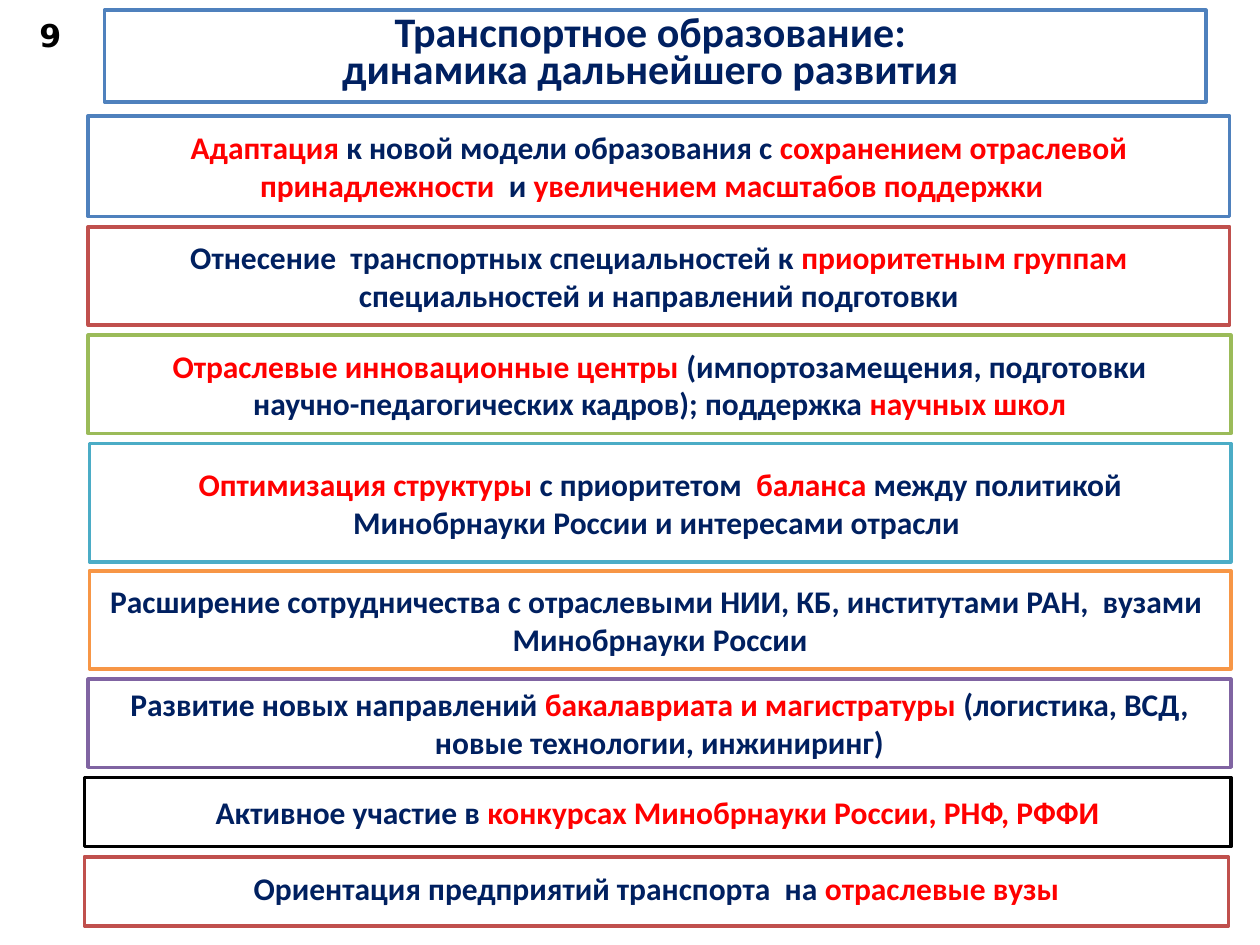
from dataclasses import dataclass

from pptx import Presentation
from pptx.dml.color import RGBColor
from pptx.enum.shapes import MSO_SHAPE
from pptx.enum.text import MSO_ANCHOR, MSO_AUTO_SIZE, PP_ALIGN
from pptx.util import Inches, Pt

RECT = MSO_SHAPE.RECTANGLE
MIDDLE = MSO_ANCHOR.MIDDLE
NO_FIT = MSO_AUTO_SIZE.NONE
CENTER = PP_ALIGN.CENTER


@dataclass(frozen=True)
class Theme:
    font: str = "Calibri"
    num_font: str = "DejaVu Sans"
    head: float = 24
    body: float = 18
    lead: float = 20.8
    line: float = 2
    navy: str = "002060"
    red: str = "FF0000"
    black: str = "000000"
    white: str = "FFFFFF"
    blue: str = "4F81BD"
    brick: str = "C0504D"
    green: str = "9BBB59"
    teal: str = "4BACC6"
    orange: str = "F79646"
    purple: str = "8064A2"


THEME = Theme()


@dataclass(frozen=True)
class Goal:
    left: float
    top: float
    width: float
    height: float
    edge: str
    text: str
    lead: float = 0


# Asterisks enclose the words set in red.
GOALS = [
    Goal(0.7, 0.92, 9.06, 0.8, THEME.blue,
         "*Адаптация* к новой модели образования с *сохранением отраслевой "
         "принадлежности * и *увеличением масштабов поддержки  *"),
    Goal(0.7, 1.8, 9.06, 0.78, THEME.brick,
         "Отнесение  транспортных специальностей к *приоритетным группам *"
         "специальностей и направлений подготовки"),
    Goal(0.7, 2.66, 9.07, 0.78, THEME.green,
         "*Отраслевые инновационные центры *(импортозамещения, подготовки\n"
         "научно-педагогических кадров); поддержка *научных школ*"),
    Goal(0.71, 3.52, 9.06, 0.94, THEME.teal,
         "*Оптимизация структуры *с приоритетом  *баланса *между политикой\n"
         "Минобрнауки России и интересами отрасли "),
    Goal(0.71, 4.53, 9.06, 0.78, THEME.orange,
         "Расширение сотрудничества с отраслевыми НИИ, КБ, институтами РАН,  "
         "вузами  Минобрнауки России"),
    Goal(0.7, 5.39, 9.07, 0.7, THEME.purple,
         "Развитие новых направлений *бакалавриата и магистратуры* "
         "(логистика, ВСД, новые технологии, инжиниринг)"),
    Goal(0.67, 6.17, 9.1, 0.55, THEME.black,
         "Активное участие в *конкурсах Минобрнауки России, РНФ, РФФИ*"),
    Goal(0.67, 6.8, 9.08, 0.55, THEME.brick,
         "Ориентация предприятий транспорта  на *отраслевые вузы*", 18),
]


def paint(shape, edge: str) -> None:
    shape.fill.solid()
    shape.fill.fore_color.rgb = RGBColor.from_string(THEME.white)
    shape.line.color.rgb = RGBColor.from_string(edge)
    shape.line.width = Pt(THEME.line)


def write(shape, text: str, size: float, color: str = THEME.navy,
          font: str = THEME.font, lead: float = 0) -> None:
    frame = shape.text_frame
    frame.word_wrap = True
    frame.auto_size = NO_FIT
    frame.vertical_anchor = MIDDLE
    for row, line in enumerate(text.split("\n")):
        para = frame.add_paragraph() if row else frame.paragraphs[0]
        para.alignment = CENTER
        if lead:
            para.line_spacing = Pt(lead)
        para.font.name = font
        para.font.size = Pt(size)
        para.font.bold = True
        for part, words in enumerate(line.split("*")):
            if words:
                run = para.add_run()
                run.text = words
                tone = THEME.red if part % 2 else color
                run.font.color.rgb = RGBColor.from_string(tone)


def add_title(slide) -> None:
    title = slide.shapes.title
    title.left, title.top = Inches(0.83), Inches(0.08)
    title.width, title.height = Inches(8.74), Inches(0.73)
    paint(title, THEME.blue)
    frame = title.text_frame
    frame.margin_left = frame.margin_right = Inches(0.06)
    frame.margin_top = frame.margin_bottom = Inches(0.03)
    write(title, "Транспортное образование: \nдинамика дальнейшего развития ",
          THEME.head, lead=THEME.lead)


def add_goal(slide, goal: Goal) -> None:
    box = slide.shapes.add_shape(RECT, Inches(goal.left), Inches(goal.top),
                                 Inches(goal.width), Inches(goal.height))
    box.shadow.inherit = False
    paint(box, goal.edge)
    write(box, goal.text, THEME.body, lead=goal.lead)


def add_number(slide) -> None:
    box = slide.shapes.add_textbox(Inches(-0.04), Inches(0.11),
                                   Inches(0.88), Inches(0.33))
    write(box, "9", THEME.body, THEME.black, THEME.num_font)


def main() -> None:
    deck = Presentation()
    deck.slide_width, deck.slide_height = Inches(10), Inches(7.5)
    slide = deck.slides.add_slide(deck.slide_layouts[5])
    add_title(slide)
    for goal in GOALS:
        add_goal(slide, goal)
    add_number(slide)
    deck.save("out.pptx")


if __name__ == "__main__":
    main()
